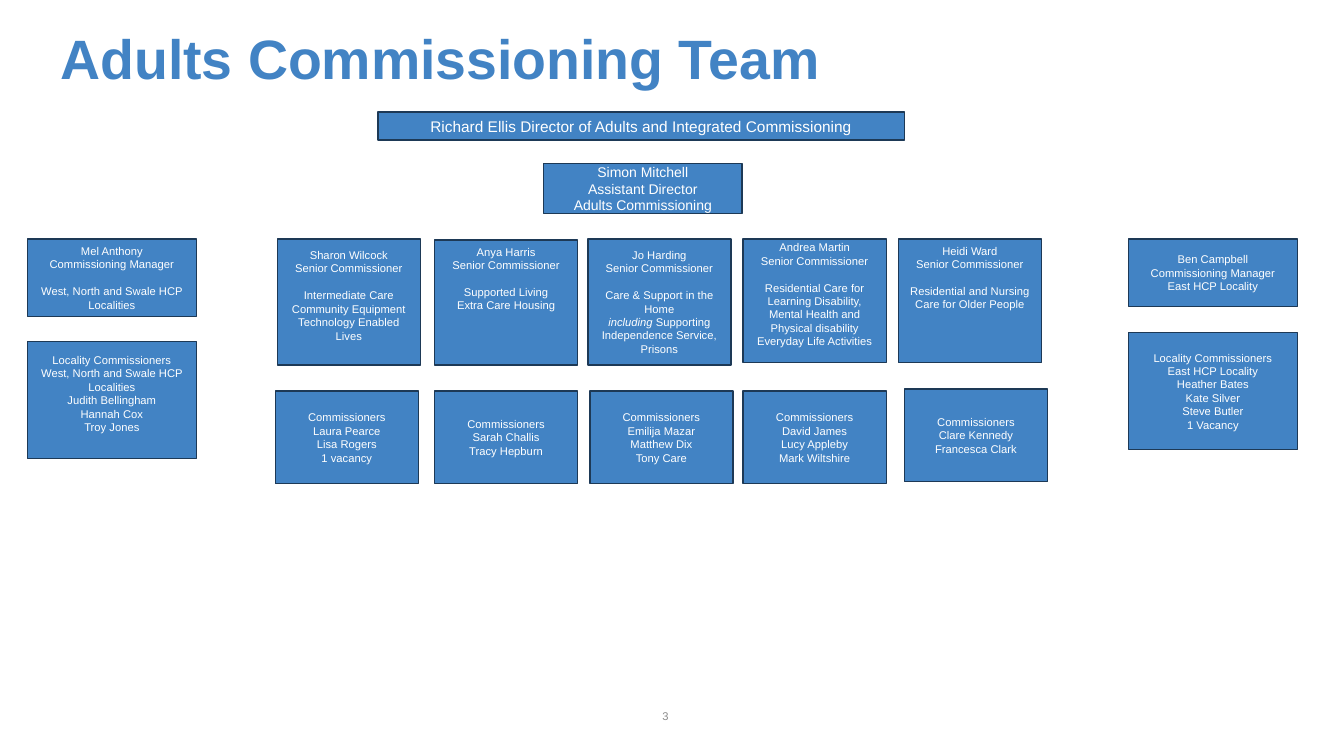
import pptx
import pptx.dml.color
import pptx.enum.shapes
import pptx.enum.text
import pptx.util

Inches, Pt = pptx.util.Inches, pptx.util.Pt
RGBColor = pptx.dml.color.RGBColor
ALIGN, ANCHOR = pptx.enum.text.PP_ALIGN, pptx.enum.text.MSO_ANCHOR

BLUE = RGBColor(0x42, 0x83, 0xC4)
NAVY = RGBColor(0x1D, 0x39, 0x56)
WHITE = RGBColor(0xFF, 0xFF, 0xFF)
GREY = RGBColor(0x8C, 0x8C, 0x8C)

# Grid of the chart, in inches
SENIOR_LEFT, SENIOR_PITCH, SENIOR_WIDTH = 2.75, 1.54, 1.42
WEST_LEFT, EAST_LEFT, LOCALITY_WIDTH = 0.27, 11.19, 1.68
MANAGER_TOP, TEAM_TOP, TEAM_HEIGHT = 2.37, 3.88, 0.92
LOCALITY_HEIGHT = 1.16
BLANK_LINE = 0.13

# Name, areas, height, top-anchored, room below the text, shift from the grid
SENIORS = [
    ("Sharon Wilcock", ["Intermediate Care", "Community Equipment",
                        "Technology Enabled Lives"], 1.25, False, BLANK_LINE, (0, 0)),
    ("Anya Harris", ["Supported Living", "Extra Care Housing"], 1.24, True, 0, (0.02, 0.01)),
    ("Jo Harding", ["Care & Support in the Home",
                    "including Supporting Independence Service, Prisons"],
     1.25, False, 0, (0, 0)),
    ("Andrea Martin", ["Residential Care for Learning Disability, Mental Health "
                       "and Physical disability", "Everyday Life Activities"],
     1.23, False, BLANK_LINE, (0, 0)),
    ("Heidi Ward", ["Residential and Nursing Care for Older People"], 1.23, True, 0, (0, 0)),
]

# Members and shift from the grid
TEAMS = [
    (["Laura Pearce", "Lisa Rogers", "1 vacancy"], (-0.02, 0)),
    (["Sarah Challis", "Tracy Hepburn"], (0.02, 0)),
    (["Emilija Mazar", "Matthew Dix", "Tony Care"], (0.02, 0)),
    (["David James", "Lucy Appleby", "Mark Wiltshire"], (0, 0)),
    (["Clare Kennedy", "Francesca Clark"], (0.06, -0.02)),
]


def write(frame, *groups, size=8, color=WHITE, bold=False, italic_word=None,
          align=ALIGN.CENTER, anchor=ANCHOR.MIDDLE, line_spacing=None, room_below=0):
    """Write groups of lines, one paragraph a line, with a gap between groups."""
    frame.word_wrap = True
    frame.vertical_anchor = anchor
    frame.margin_bottom = Inches(0.05 + room_below)
    lines = [(line, number > 0 and position == 0)
             for number, group in enumerate(groups)
             for position, line in enumerate(group)]
    for index, (line, opens_group) in enumerate(lines):
        paragraph = frame.add_paragraph() if index else frame.paragraphs[0]
        paragraph.alignment = align
        if line_spacing:
            paragraph.line_spacing = line_spacing
        if opens_group:
            paragraph.space_before = Pt(size * 1.2)
        starts_italic = italic_word and line.startswith(italic_word)
        parts = [italic_word, line[len(italic_word):]] if starts_italic else [line]
        for part in parts:
            run = paragraph.add_run()
            run.text = part
            run.font.name = "Arial"
            run.font.size = Pt(size)
            run.font.bold = bold
            run.font.italic = part == italic_word
            run.font.color.rgb = color


def add_label(slide, area, text, **text_format):
    box = slide.shapes.add_textbox(*map(Inches, area))
    write(box.text_frame, [text], **text_format)


def add_post(slide, area, *groups, **text_format):
    """Add one box of the organisation chart."""
    post = slide.shapes.add_shape(pptx.enum.shapes.MSO_SHAPE.RECTANGLE, *map(Inches, area))
    post.shadow.inherit = False
    post.fill.solid()
    post.fill.fore_color.rgb = BLUE
    post.line.color.rgb = NAVY
    post.line.width = Pt(1)
    write(post.text_frame, *groups, **text_format)


def senior_area(column, top, height, shift):
    left = SENIOR_LEFT + column * SENIOR_PITCH + shift[0]
    return left, top + shift[1], SENIOR_WIDTH, height


def add_directors(slide):
    add_post(slide, (3.75, 1.11, 5.22, 0.28),
             ["Richard Ellis Director of Adults and Integrated Commissioning"], size=11)
    add_post(slide, (5.39, 1.62, 1.97, 0.5),
             ["Simon Mitchell", "Assistant Director", "Adults Commissioning"], size=10)


def add_localities(slide):
    add_post(slide, (WEST_LEFT, MANAGER_TOP, LOCALITY_WIDTH, 0.77),
             ["Mel Anthony", "Commissioning Manager"],
             ["West, North and Swale HCP Localities"])
    add_post(slide, (EAST_LEFT, MANAGER_TOP, LOCALITY_WIDTH, 0.67),
             ["Ben Campbell", "Commissioning Manager", "East HCP Locality"])
    add_post(slide, (WEST_LEFT, 3.39, LOCALITY_WIDTH, LOCALITY_HEIGHT),
             ["Locality Commissioners", "West, North and Swale HCP Localities",
              "Judith Bellingham", "Hannah Cox", "Troy Jones"], room_below=BLANK_LINE)
    add_post(slide, (EAST_LEFT, 3.3, LOCALITY_WIDTH, LOCALITY_HEIGHT),
             ["Locality Commissioners", "East HCP Locality", "Heather Bates",
              "Kate Silver", "Steve Butler", "1 Vacancy"])


def add_senior_commissioners(slide):
    for column, (name, areas, height, at_top, room, shift) in enumerate(SENIORS):
        add_post(slide, senior_area(column, MANAGER_TOP, height, shift),
                 [name, "Senior Commissioner"], areas, italic_word="including",
                 anchor=ANCHOR.TOP if at_top else ANCHOR.MIDDLE, room_below=room)
    for column, (members, shift) in enumerate(TEAMS):
        add_post(slide, senior_area(column, TEAM_TOP, TEAM_HEIGHT, shift),
                 ["Commissioners", *members])


def main():
    deck = pptx.Presentation()
    deck.slide_width, deck.slide_height = Inches(13.33), Inches(7.5)
    slide = deck.slides.add_slide(deck.slide_layouts[6])
    add_label(slide, (0.5, 0.28, 8.01, 0.67), "Adults Commissioning Team", size=39.6,
              color=BLUE, bold=True, align=ALIGN.LEFT, line_spacing=0.9)
    add_directors(slide)
    add_localities(slide)
    add_senior_commissioners(slide)
    add_label(slide, (5.1, 6.9, 3, 0.4), "3", color=GREY)
    deck.save("out.pptx")


if __name__ == "__main__":
    main()
